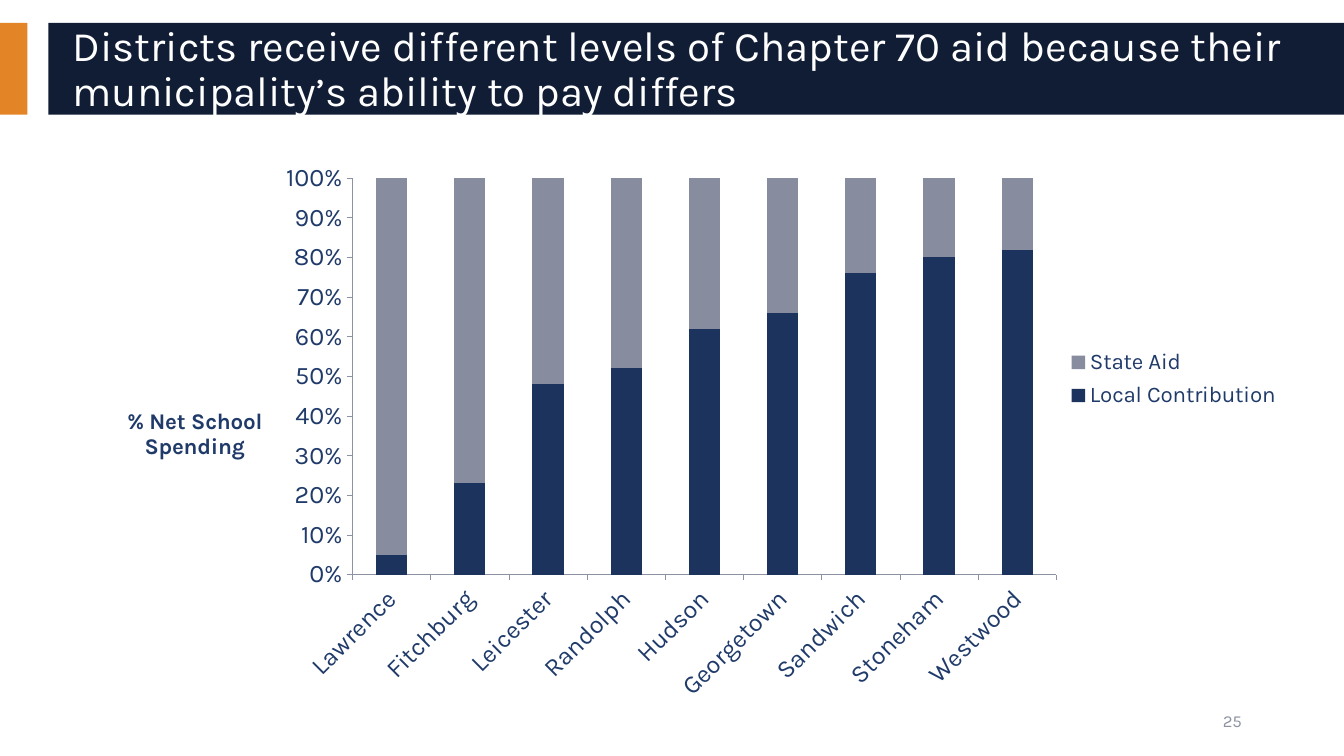
from dataclasses import dataclass

from pptx import Presentation
from pptx.chart.data import CategoryChartData
from pptx.dml.color import RGBColor
from pptx.enum.chart import XL_CHART_TYPE as CHART, XL_LEGEND_POSITION as LEGEND
from pptx.enum.chart import XL_TICK_MARK as TICK
from pptx.enum.shapes import MSO_SHAPE as SHAPE
from pptx.enum.text import MSO_ANCHOR as ANCHOR, MSO_AUTO_SIZE as AUTOSIZE, PP_ALIGN as ALIGN
from pptx.oxml import parse_xml
from pptx.oxml.ns import nsdecls
from pptx.util import Cm, Pt


@dataclass(frozen=True)
class Theme:
    font: str = "Karla"
    orange: str = "E38526"
    navy: str = "101D35"
    white: str = "FFFFFF"
    text: str = "203B6A"
    gray: str = "8D92A1"
    local: str = "1B335D"
    state: str = "878C9E"
    title_size: int = 30
    axis_size: int = 18
    legend_size: int = 16
    number_size: int = 12


THEME = Theme()
TITLE = ("Districts receive different levels of Chapter 70 aid "
         "because their municipality’s ability to pay differs")
DISTRICTS = ["Lawrence", "Fitchburg", "Leicester", "Randolph", "Hudson",
             "Georgetown", "Sandwich", "Stoneham", "Westwood"]
LOCAL_SHARE = [5, 23, 48, 52, 62, 66, 76, 80, 82]


def set_attrs(obj, values):
    for name, value in values.items():
        setattr(obj, name, value)


def format_font(font, size, color, bold=False):
    set_attrs(font, {"name": THEME.font, "size": Pt(size), "bold": bold})
    font.color.rgb = RGBColor.from_string(color)


def add_bar(slide, box, color):
    sp = slide.shapes.add_shape(SHAPE.RECTANGLE, *map(Cm, box))
    sp.shadow.inherit = False
    sp.fill.solid()
    sp.fill.fore_color.rgb = RGBColor.from_string(color)
    sp.line.fill.background()


def write_text(sp, text, size, color, align):
    tf = sp.text_frame
    set_attrs(tf, {"word_wrap": True, "auto_size": AUTOSIZE.NONE,
                   "vertical_anchor": ANCHOR.MIDDLE})
    p = tf.paragraphs[0]
    p.alignment = align
    r = p.add_run()
    r.text = text
    format_font(r.font, size, color)
    return p


def place_title(slide, box):
    sp = slide.shapes.title
    set_attrs(sp, dict(zip(("left", "top", "width", "height"), map(Cm, box))))
    p = write_text(sp, TITLE, THEME.title_size, THEME.white, ALIGN.LEFT)
    p.line_spacing = 0.9
    # Bring the title in front of its band
    slide.shapes.element.append(sp.element)


def set_layout(parent, index, inner=False, **fractions):
    """Give a chart part a fixed place, in fractions of the chart."""
    for old in parent.xpath("./c:layout"):
        parent.remove(old)
    target = '<c:layoutTarget val="inner"/>' if inner else ""
    modes = "".join(f'<c:{k}Mode val="edge"/>' for k in "xy")
    sizes = "".join(f'<c:{k} val="{v}"/>' for k, v in fractions.items())
    parent.insert(index, parse_xml(
        f'<c:layout {nsdecls("c")}><c:manualLayout>{target}{modes}{sizes}'
        '</c:manualLayout></c:layout>'))


def format_axis(axis):
    set_attrs(axis, {"has_major_gridlines": False, "major_tick_mark": TICK.OUTSIDE,
                     "minor_tick_mark": TICK.NONE})
    format_font(axis.tick_labels.font, THEME.axis_size, THEME.text)
    axis.format.line.color.rgb = RGBColor.from_string(THEME.gray)
    axis.format.line.width = Pt(0.5)


def add_axis_title(axis, lines):
    tf = axis.axis_title.text_frame
    tf.text = "\n".join(lines)
    for p in tf.paragraphs:
        p.alignment = ALIGN.CENTER
        format_font(p.runs[0].font, THEME.legend_size, THEME.text, bold=True)
    title = axis.axis_title.element
    title.xpath(".//a:bodyPr")[0].attrib.update({"rot": "0", "vert": "horz"})
    set_layout(title, 1, x=0.05, y=0.44)


def add_share_chart(slide, box):
    data = CategoryChartData()
    data.categories = DISTRICTS
    data.add_series("Local Contribution", LOCAL_SHARE)
    data.add_series("State Aid", [100 - share for share in LOCAL_SHARE])
    chart = slide.shapes.add_chart(CHART.COLUMN_STACKED_100, *map(Cm, box), data).chart
    chart.has_title = False
    format_font(chart.font, THEME.axis_size, THEME.text)

    # Columns
    plot = chart.plots[0]
    set_attrs(plot, {"gap_width": 150, "overlap": 100, "vary_by_categories": False})
    for series, color in zip(plot.series, (THEME.local, THEME.state)):
        series.format.fill.solid()
        series.format.fill.fore_color.rgb = RGBColor.from_string(color)
    set_layout(chart.element.xpath(".//c:plotArea")[0], 0, inner=True,
               x=0.235, y=0.042, w=0.57, h=0.697)

    # Axes
    for axis in (chart.category_axis, chart.value_axis):
        format_axis(axis)
    chart.element.xpath(".//c:catAx/c:txPr/a:bodyPr")[0].set("rot", "-2700000")
    set_attrs(chart.value_axis, {"minimum_scale": 0, "maximum_scale": 1, "major_unit": 0.1})
    set_attrs(chart.value_axis.tick_labels,
              {"number_format": "0%", "number_format_is_linked": False})
    add_axis_title(chart.value_axis, ["% Net School", "Spending"])

    # Legend
    chart.has_legend = True
    set_attrs(chart.legend, {"position": LEGEND.RIGHT, "include_in_layout": False})
    format_font(chart.legend.font, THEME.legend_size, THEME.text)
    set_layout(chart.element.xpath(".//c:legend")[0], 1, x=0.81, y=0.33, w=0.18, h=0.13)


def main():
    prs = Presentation()
    set_attrs(prs, {"slide_width": Cm(33.87), "slide_height": Cm(19.05)})
    slide = prs.slides.add_slide(prs.slide_layouts[5])

    # Header
    add_bar(slide, (0, 0.58, 0.69, 2.31), THEME.orange)
    add_bar(slide, (1.22, 0.58, 32.65, 2.31), THEME.navy)
    place_title(slide, (1.57, 0.84, 31.6, 1.88))

    # Chart
    add_share_chart(slide, (1.57, 3.89, 31.12, 14.33))

    # Page number
    number = slide.shapes.add_textbox(*map(Cm, (23.93, 17.65, 7.62, 1.02)))
    write_text(number, "25", THEME.number_size, THEME.gray, ALIGN.RIGHT)

    prs.save("out.pptx")


if __name__ == "__main__":
    main()
